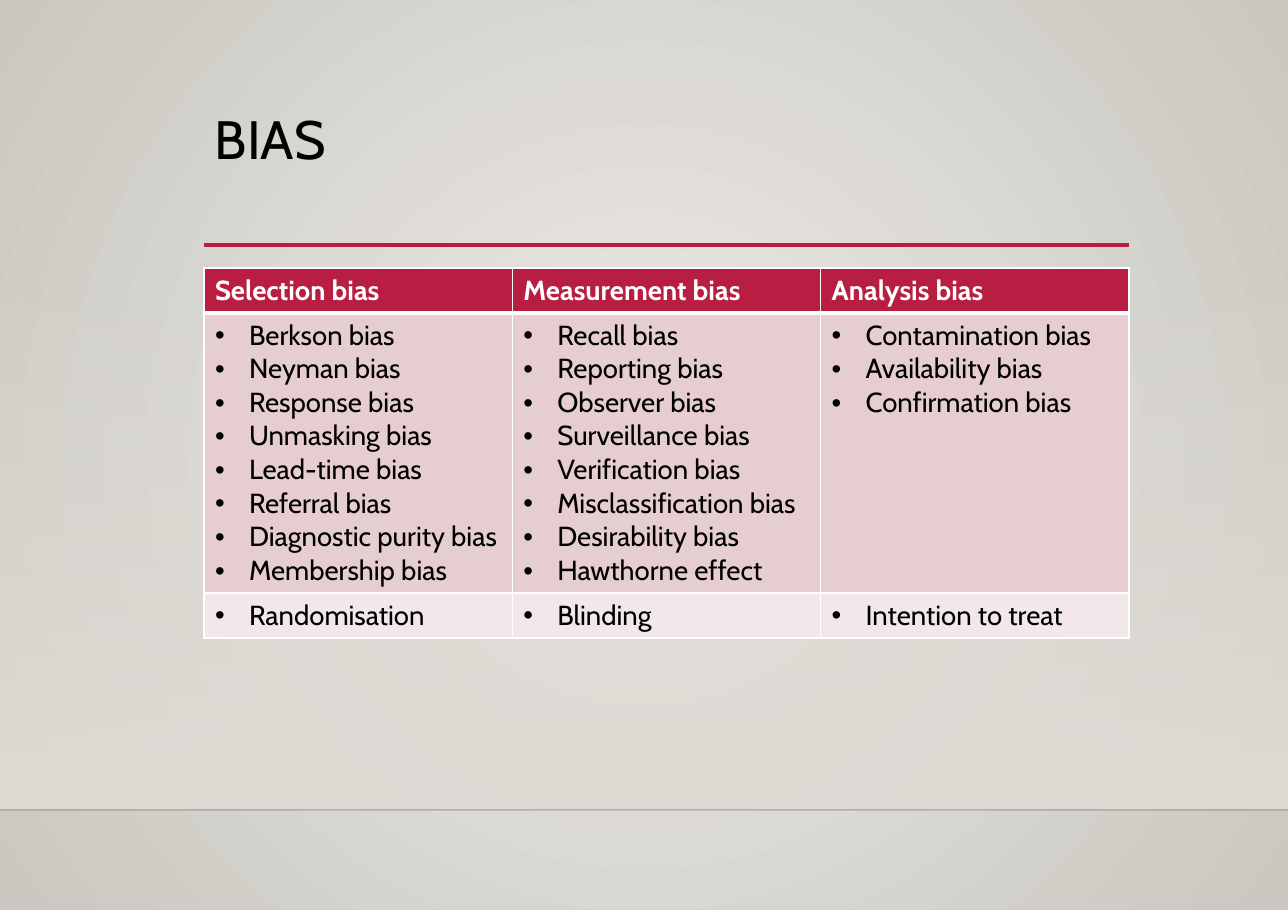
from lxml.etree import SubElement
from pptx import Presentation
from pptx.dml.color import RGBColor
from pptx.enum.shapes import MSO_CONNECTOR, MSO_SHAPE
from pptx.enum.text import MSO_ANCHOR
from pptx.oxml.ns import qn
from pptx.util import Pt

PX = 8298
FONT = "Cabin"
COLORS = {
    "center": "ECEAE7", "edge": "CAC7C1", "wall": "DFDBD5", "floor_line": "000001",
    "accent": "B71E42", "body": "E6CDCF", "remedy": "F3E8E9",
    "black": "000000", "white": "FFFFFF",
}
WIDTH, HEIGHT = 1288, 910
LEFT, CONTENT_WIDTH = 204, 925
TABLE_TOP, FLOOR = 268, 810
ROW_HEIGHTS = [45, 280, 45]
ROW_FILLS = ["accent", "body", "remedy"]
BORDER_WIDTHS = [1, 3, 1, 1]
COLUMNS = [
    ("Selection bias",
     ["Berkson bias", "Neyman bias", "Response bias", "Unmasking bias", "Lead-time bias",
      "Referral bias", "Diagnostic purity bias", "Membership bias"],
     "Randomisation"),
    ("Measurement bias",
     ["Recall bias", "Reporting bias", "Observer bias", "Surveillance bias",
      "Verification bias", "Misclassification bias", "Desirability bias", "Hawthorne effect"],
     "Blinding"),
    ("Analysis bias",
     ["Contamination bias", "Availability bias", "Confirmation bias"],
     "Intention to treat"),
]


def rgb(name):
    return RGBColor.from_string(COLORS[name])


def add_run(paragraph, text, size, color, bold=False):
    run = paragraph.add_run()
    run.text = text
    run.font.name = FONT
    run.font.size = Pt(size)
    run.font.bold = bold
    run.font.color.rgb = rgb(color)


presentation = Presentation()
presentation.slide_width = WIDTH * PX
presentation.slide_height = HEIGHT * PX
slide = presentation.slides.add_slide(presentation.slide_layouts[6])

background = slide.background.fill
background.gradient()
for stop, color, position in zip(background.gradient_stops, ["center", "edge"], [0, 1]):
    stop.color.rgb = rgb(color)
    stop.position = position
linear = next(slide.element.iter(qn("a:lin")))
gradient = linear.getparent()
gradient.remove(linear)
circle = SubElement(gradient, qn("a:path"), path="circle")
SubElement(circle, qn("a:fillToRect"), l="50000", t="50000", r="50000", b="50000")

wall = slide.shapes.add_shape(
    MSO_SHAPE.RECTANGLE, 0, TABLE_TOP * PX, WIDTH * PX, (FLOOR - TABLE_TOP) * PX)
wall.shadow.inherit = False
wall.line.fill.background()
wall.fill.gradient()
wall.fill.gradient_angle = 270
for stop, position in zip(wall.fill.gradient_stops, [0, 1]):
    stop.color.rgb = rgb("wall")
    stop.position = position
first_color = next(wall.element.spPr.iter(qn("a:srgbClr")))
SubElement(first_color, qn("a:alpha"), val="0")

for left, right, top, color, width, opacity in [
    (0, WIDTH, FLOOR, "floor_line", 1, 20),
    (LEFT, LEFT + CONTENT_WIDTH, 245, "accent", 2.5, 100),
]:
    line = slide.shapes.add_connector(
        MSO_CONNECTOR.STRAIGHT, left * PX, top * PX, right * PX, top * PX)
    line.line.color.rgb = rgb(color)
    line.line.width = Pt(width)
    line_color = next(line.element.spPr.iter(qn("a:srgbClr")))
    SubElement(line_color, qn("a:alpha"), val=str(opacity * 1000))
    SubElement(line.element.spPr, qn("a:effectLst"))

title = slide.shapes.add_textbox(LEFT * PX, 107 * PX, CONTENT_WIDTH * PX, 139 * PX)
title.text_frame.word_wrap = True
title.text_frame.vertical_anchor = MSO_ANCHOR.TOP
title_paragraph = title.text_frame.paragraphs[0]
title_paragraph.line_spacing = 0.9
add_run(title_paragraph, "BIAS", 35.3, "black")

table = slide.shapes.add_table(
    len(ROW_HEIGHTS), len(COLUMNS), LEFT * PX, TABLE_TOP * PX,
    CONTENT_WIDTH * PX, sum(ROW_HEIGHTS) * PX).table
for row, height in zip(table.rows, ROW_HEIGHTS):
    row.height = height * PX

for column_index, (heading, biases, remedy) in enumerate(COLUMNS):
    for row_index, entries in enumerate([[heading], biases, [remedy]]):
        cell = table.cell(row_index, column_index)
        is_header = row_index == 0
        for entry_index, entry in enumerate(entries):
            frame = cell.text_frame
            paragraph = frame.add_paragraph() if entry_index else frame.paragraphs[0]
            if not is_header:
                properties = paragraph._p.get_or_add_pPr()
                properties.set("marL", str(34 * PX))
                properties.set("indent", str(-34 * PX))
                SubElement(properties, qn("a:buFont"), typeface="Arial")
                SubElement(properties, qn("a:buChar"), char="•")
            add_run(paragraph, entry, 18, "white" if is_header else "black", is_header)
        cell_properties = cell._tc.get_or_add_tcPr()
        for side, width in [("L", 1), ("R", 1), ("T", BORDER_WIDTHS[row_index]),
                            ("B", BORDER_WIDTHS[row_index + 1])]:
            border = SubElement(cell_properties, qn(f"a:ln{side}"), w=str(Pt(width)))
            border_fill = SubElement(border, qn("a:solidFill"))
            SubElement(border_fill, qn("a:srgbClr"), val=COLORS["white"])
        cell.fill.solid()
        cell.fill.fore_color.rgb = rgb(ROW_FILLS[row_index])

presentation.save("out.pptx")
